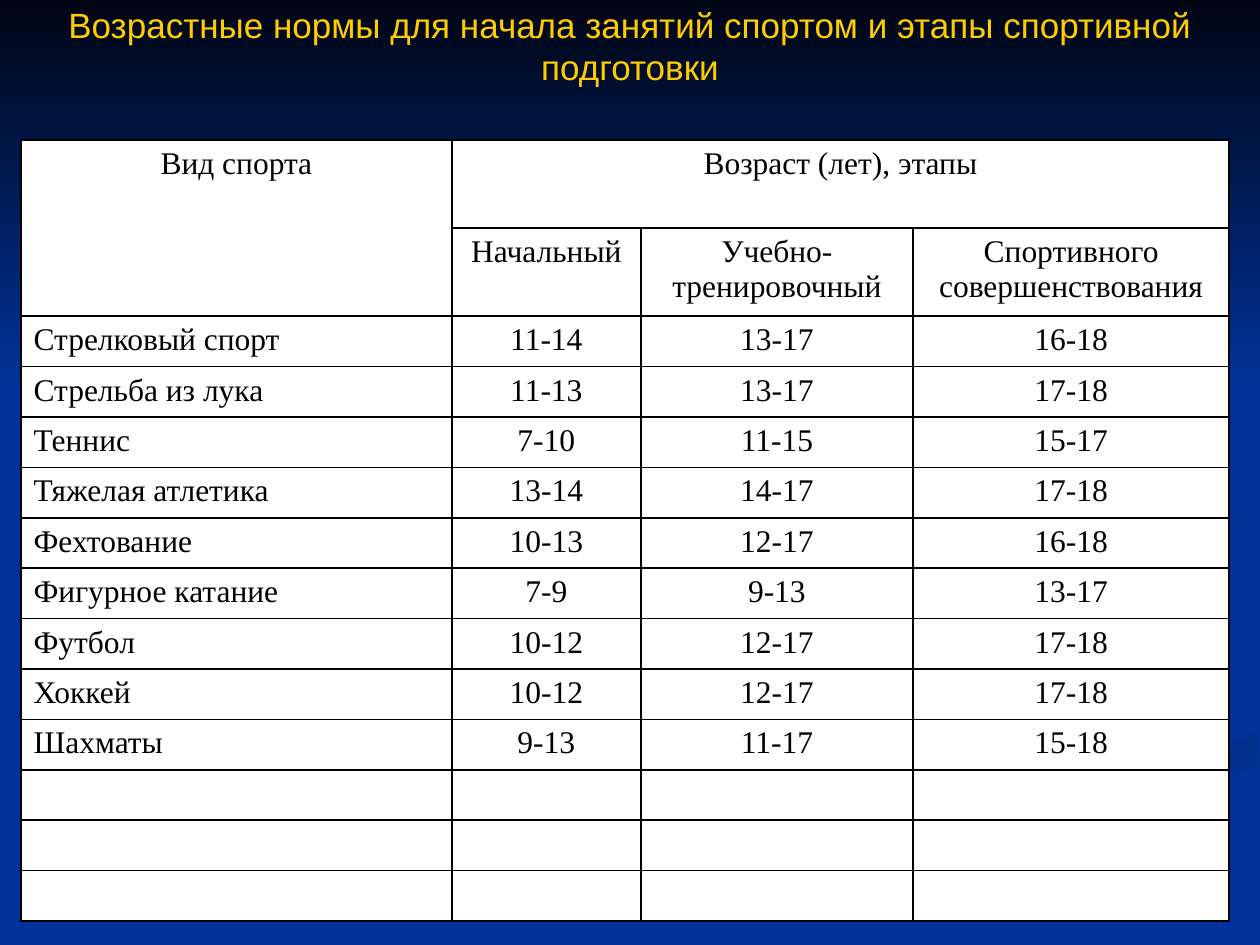
import pptx
import pptx.util
import pptx.dml.color
import pptx.enum.shapes
import pptx.enum.text
import pptx.oxml
import pptx.oxml.ns

Inches, Pt = pptx.util.Inches, pptx.util.Pt
RGBColor = pptx.dml.color.RGBColor
PP_ALIGN = pptx.enum.text.PP_ALIGN
ANCHOR = pptx.enum.text.MSO_ANCHOR

BLUE = RGBColor(0x00, 0x33, 0x99)
NIGHT = RGBColor(0x00, 0x05, 0x14)
RIBBON = RGBColor(0x00, 0x2F, 0x8C)
CURL = RGBColor(0x00, 0x30, 0x91)
TAIL = RGBColor(0x00, 0x31, 0x93)
GOLD = RGBColor(0xFF, 0xCC, 0x00)
WHITE = RGBColor(0xFF, 0xFF, 0xFF)
BLACK = RGBColor(0x00, 0x00, 0x00)


def fade(sp, start, end, angle):
    """Fill a borderless shape with a gradient; the angle is counter-clockwise."""
    sp.shadow.inherit = False
    sp.line.fill.background()
    sp.fill.gradient()
    sp.fill.gradient_angle = angle
    for stop, position, color in zip(sp.fill.gradient_stops, (0, 1), (start, end)):
        stop.position = position
        stop.color.rgb = color


def add_borders(cell):
    tcPr = cell._tc.get_or_add_tcPr()
    for side in "LRTB":
        tcPr.append(pptx.oxml.parse_xml(
            f'<a:ln{side} {pptx.oxml.ns.nsdecls("a")} w="12700"><a:solidFill>'
            f'<a:srgbClr val="{BLACK}"/></a:solidFill></a:ln{side}>'))


prs = pptx.Presentation()
prs.slide_width, prs.slide_height = Inches(10), Inches(7.5)
W, H = prs.slide_width, prs.slide_height
s = prs.slides.add_slide(prs.slide_layouts[5])
s.background.fill.solid()
s.background.fill.fore_color.rgb = BLUE

# Outlines of the background swirls in hundredths of an inch
tail = [(781, 553), (757, 543), (715, 528), (661, 513), (614, 496), (587, 481),
        (575, 466), (575, 459), (570, 472), (581, 484), (611, 499), (679, 519),
        (728, 535), (762, 547), (781, 556), (786, 566), (780, 579), (759, 590),
        (714, 605), (652, 620), (579, 639), (499, 661), (417, 690), (338, 727),
        (300, 749), (361, 749), (431, 714), (499, 687), (564, 665), (623, 647),
        (699, 628), (756, 614), (786, 601), (797, 588), (800, 581), (795, 567)]
ribbon_top = [(998, 581), (976, 590), (936, 602), (867, 620), (764, 647),
              (696, 669), (630, 693), (569, 719), (519, 747), (503, 749)]
ribbon = ribbon_top + [(571, 749), (600, 733), (649, 710), (695, 692), (752, 672),
                       (821, 651), (903, 630), (998, 609)]
band = [(725, 464), (734, 483), (759, 498), (793, 509), (851, 524), (905, 540),
        (935, 557), (943, 570), (936, 587), (911, 600), (869, 611), (780, 634),
        (704, 655), (619, 684), (526, 724), (477, 749)] + ribbon_top[::-1] + [
        (999, 538), (959, 531), (904, 519), (848, 503), (804, 485), (784, 469),
        (782, 460), (800, 442), (835, 430), (899, 418), (968, 409), (999, 402),
        (999, 387), (942, 399), (874, 408), (808, 417), (755, 432), (730, 449)]
curl = [(781, 460), (782, 469), (797, 483), (826, 496), (809, 484), (805, 472),
        (816, 459), (843, 448), (896, 435), (954, 426), (998, 420), (998, 402),
        (967, 409), (898, 418), (835, 430), (799, 442)]

for outline, start, end, angle in [(tail, BLUE, TAIL, 0), (ribbon, RIBBON, BLUE, 270),
                                   (band, BLUE, BLUE, 0), (curl, CURL, BLUE, 315)]:
    builder = s.shapes.build_freeform(*outline[0], scale=Inches(0.01))
    builder.add_line_segments(outline[1:], close=True)
    sp = builder.convert_to_shape()
    fade(sp, start, end, angle)
    if start == end:
        sp.fill.solid()
        sp.fill.fore_color.rgb = start

sky = s.shapes.add_shape(pptx.enum.shapes.MSO_SHAPE.RECTANGLE, 0, 0, W, int(H * 0.41))
fade(sky, NIGHT, BLUE, 270)

title = s.shapes.title
s.shapes.element.append(title.element)  # in front of the gradient
title.left, title.top, title.width, title.height = 0, Inches(0.14), W, Inches(0.73)
tf = title.text_frame
tf.text = "Возрастные нормы для начала занятий спортом и этапы спортивной подготовки"
tf.word_wrap = True
tf.auto_size = pptx.enum.text.MSO_AUTO_SIZE.NONE
tf.vertical_anchor = ANCHOR.MIDDLE
tf.margin_top, tf.margin_bottom = 0, Inches(0.29)
p = tf.paragraphs[0]
p.alignment = PP_ALIGN.CENTER
r = p.runs[0]
r.font.name, r.font.size, r.font.color.rgb = "Arial", Pt(20), GOLD

rows = [
    ("Вид спорта", "Возраст (лет), этапы", "", ""),
    ("", "Начальный", "Учебно-тренировочный", "Спортивного совершенствования"),
    ("Стрелковый спорт", "11-14", "13-17", "16-18"),
    ("Стрельба из лука", "11-13", "13-17", "17-18"),
    ("Теннис", "7-10", "11-15", "15-17"),
    ("Тяжелая атлетика", "13-14", "14-17", "17-18"),
    ("Фехтование", "10-13", "12-17", "16-18"),
    ("Фигурное катание", "7-9", "9-13", "13-17"),
    ("Футбол", "10-12", "12-17", "17-18"),
    ("Хоккей", "10-12", "12-17", "17-18"),
    ("Шахматы", "9-13", "11-17", "15-18"),
] + [("",) * 4] * 3
HEADER_ROWS = 2
col_widths = [3.42, 1.5, 2.16, 2.51]
row_heights = [0.7 if i < HEADER_ROWS else 0.4 for i in range(len(rows))]

table = s.shapes.add_table(len(rows), len(col_widths), W // 60, Inches(1.11),
                           Inches(sum(col_widths)), Inches(sum(row_heights))).table
table.first_row = table.horz_banding = False
for column, width in zip(table.columns, col_widths):
    column.width = Inches(width)
for row, height in zip(table.rows, row_heights):
    row.height = Inches(height)

for i, values in enumerate(rows):
    for j, value in enumerate(values):
        cell = table.cell(i, j)
        add_borders(cell)
        cell.fill.solid()
        cell.fill.fore_color.rgb = WHITE
        if value:
            cell.text_frame.text = value
            p = cell.text_frame.paragraphs[0]
            p.alignment = PP_ALIGN.CENTER if j or i < HEADER_ROWS else PP_ALIGN.LEFT
            font = p.runs[0].font
            font.name, font.size, font.color.rgb = "Times New Roman", Pt(18), BLACK
        else:
            cell.margin_top = cell.margin_bottom = Inches(0.03)
table.cell(0, 0).merge(table.cell(1, 0))
table.cell(0, 1).merge(table.cell(0, 3))

prs.save("out.pptx")
